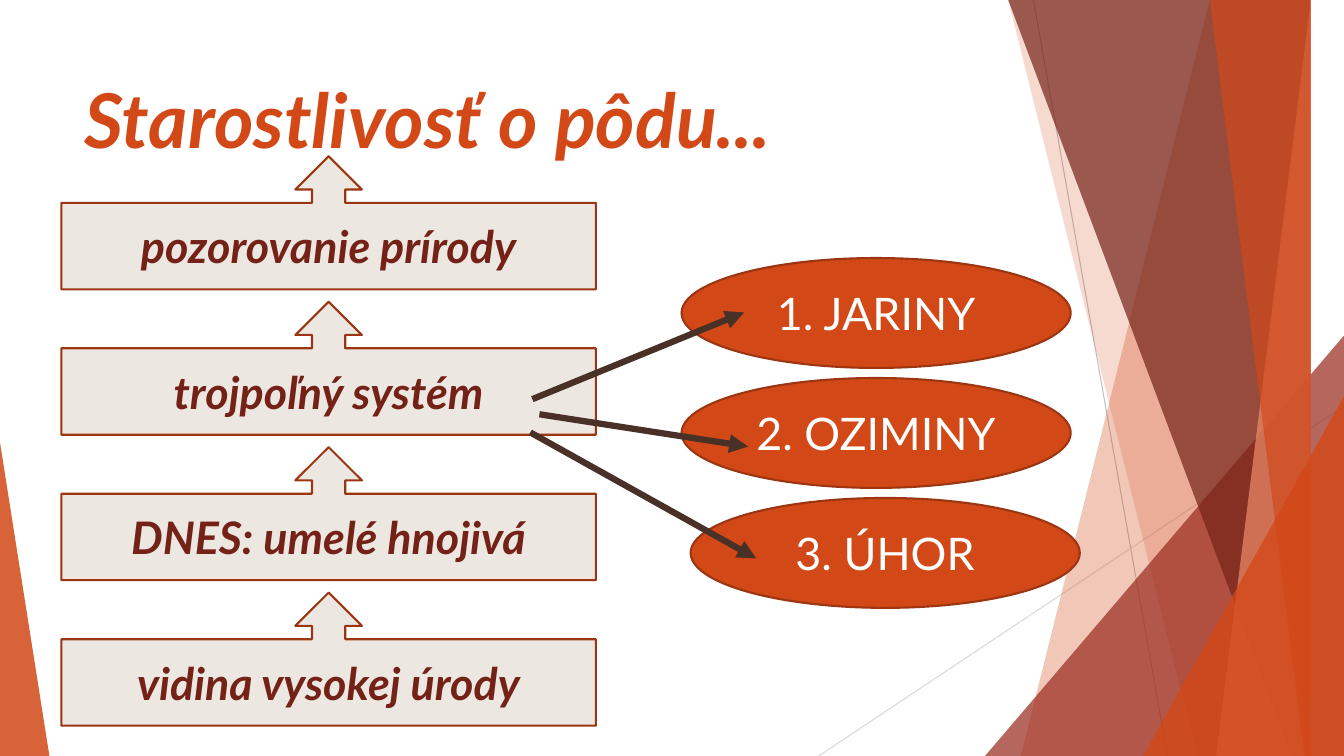
from lxml import etree
from pptx import Presentation
from pptx.dml.color import RGBColor
from pptx.enum.shapes import MSO_CONNECTOR, MSO_SHAPE
from pptx.enum.text import MSO_ANCHOR, PP_ALIGN
from pptx.oxml.ns import qn
from pptx.util import Inches, Pt

STRAIGHT = MSO_CONNECTOR.STRAIGHT
TRIANGLE = MSO_SHAPE.ISOSCELES_TRIANGLE
CALLOUT = MSO_SHAPE.UP_ARROW_CALLOUT
ELLIPSE = MSO_SHAPE.OVAL
TOP, MIDDLE = MSO_ANCHOR.TOP, MSO_ANCHOR.MIDDLE
LEFT, CENTER = PP_ALIGN.LEFT, PP_ALIGN.CENTER

FONT = "Lato"
WIDTH, HEIGHT = 13.33, 7.5
COLORS = {
    "orange": "D34817",
    "salmon": "EF8C6A",
    "red": "9B2D1F",
    "maroon": "742217",
    "outline": "9C3511",
    "cream": "ECE8E1",
    "brown": "4A3128",
    "gray": "BFBFBF",
    "light gray": "D9D9D9",
    "white": "FFFFFF",
}

presentation = Presentation()
presentation.slide_width = Inches(WIDTH)
presentation.slide_height = Inches(HEIGHT)
slide = presentation.slides.add_slide(presentation.slide_layouts[6])
shapes = slide.shapes


def add_line(start, end, color, width):
    line = shapes.add_connector(STRAIGHT, *(Inches(value) for value in start + end))
    line.line.color.rgb = RGBColor.from_string(COLORS[color])
    line.line.width = Pt(width)
    etree.SubElement(line._element.spPr, qn("a:effectLst"))
    return line


def write_text(shape, text, size, color, emphasis, anchor, alignment):
    """Fill a shape with one run; emphasis makes it bold italic."""
    frame = shape.text_frame
    frame.word_wrap = True
    frame.vertical_anchor = anchor
    paragraph = frame.paragraphs[0]
    paragraph.alignment = alignment
    run = paragraph.add_run()
    run.text = text
    run.font.name = FONT
    run.font.size = Pt(size)
    run.font.bold = run.font.italic = emphasis
    run.font.color.rgb = RGBColor.from_string(COLORS[color])


# Background facets, from back to front
add_line((10.25, 0), (11.58, HEIGHT), "gray", 0.75)
add_line((WIDTH, 4.03), (8.12, HEIGHT), "light gray", 0.75)

# Bands reach the right edge: (top left x, bottom left x)
# Triangles stand on the bottom edge: (left, top, width, apex position)
facets = [
    ((12.28, 10.04), "orange", 30),
    ((10.5, 11.83), "orange", 20),
    ((9.77, 3.33, 3.56, 1), "red", 72),
    ((10.21, 12.91), "maroon", 70),
    ((13.03, 11.92), "salmon", 70),
    ((11.96, 13.18), "orange", 65),
    ((11.34, 3.93, 1.99, 1), "orange", 80),
    ((0, 4.39, 0.49, 0), "orange", 85),
]
for geometry, color, opacity in facets:
    if len(geometry) == 2:
        top_x, bottom_x = geometry
        builder = shapes.build_freeform(top_x, 0, scale=Inches(1))
        builder.add_line_segments([(WIDTH, 0), (WIDTH, HEIGHT), (bottom_x, HEIGHT)])
        facet = builder.convert_to_shape()
    else:
        left, top, width, apex = geometry
        facet = shapes.add_shape(
            TRIANGLE, Inches(left), Inches(top), Inches(width), Inches(HEIGHT - top)
        )
        facet.adjustments[0] = apex
    facet.shadow.inherit = False
    facet.line.fill.background()
    facet.fill.solid()
    facet.fill.fore_color.rgb = RGBColor.from_string(COLORS[color])
    fill_color = facet._element.spPr.find(qn("a:solidFill"))[0]
    etree.SubElement(fill_color, qn("a:alpha"), val=str(opacity * 1000))

# Title
title = shapes.add_textbox(Inches(0.74), Inches(0.67), Inches(9.4), Inches(1.44))
write_text(title, "Starostlivosť o pôdu...", 54, "orange", True, TOP, LEFT)

# Stack of callouts and the three fields
callouts = [
    "pozorovanie prírody",
    "trojpoľný systém",
    "DNES: umelé hnojivá",
    "vidina vysokej úrody",
]
fields = [(6.76, "1. JARINY"), (6.76, "2. OZIMINY"), (6.85, "3. ÚHOR")]
boxes = [
    (CALLOUT, 0.61, 1.55 + 1.443 * row, 5.3, 1.32, text, "cream", "maroon", True)
    for row, text in enumerate(callouts)
] + [
    (ELLIPSE, left, 2.56 + 1.19 * row, 3.86, 1.09, text, "orange", "white", False)
    for row, (left, text) in enumerate(fields)
]
for kind, left, top, width, height, text, fill, text_color, emphasis in boxes:
    box = shapes.add_shape(kind, Inches(left), Inches(top), Inches(width), Inches(height))
    box.shadow.inherit = False
    box.fill.solid()
    box.fill.fore_color.rgb = RGBColor.from_string(COLORS[fill])
    box.line.color.rgb = RGBColor.from_string(COLORS["outline"])
    box.line.width = Pt(1.5)
    write_text(box, text, 32, text_color, emphasis, MIDDLE, CENTER)

# Arrows from the three-field system to its fields
arrows = [
    ((5.28, 3.96), (7.38, 3.1)),
    ((5.35, 4.11), (7.42, 4.43)),
    ((5.26, 4.29), (7.5, 5.54)),
]
for start, end in arrows:
    arrow = add_line(start, end, "brown", 4.5)
    etree.SubElement(arrow.line._get_or_add_ln(), qn("a:tailEnd"), type="triangle")

presentation.save("out.pptx")
